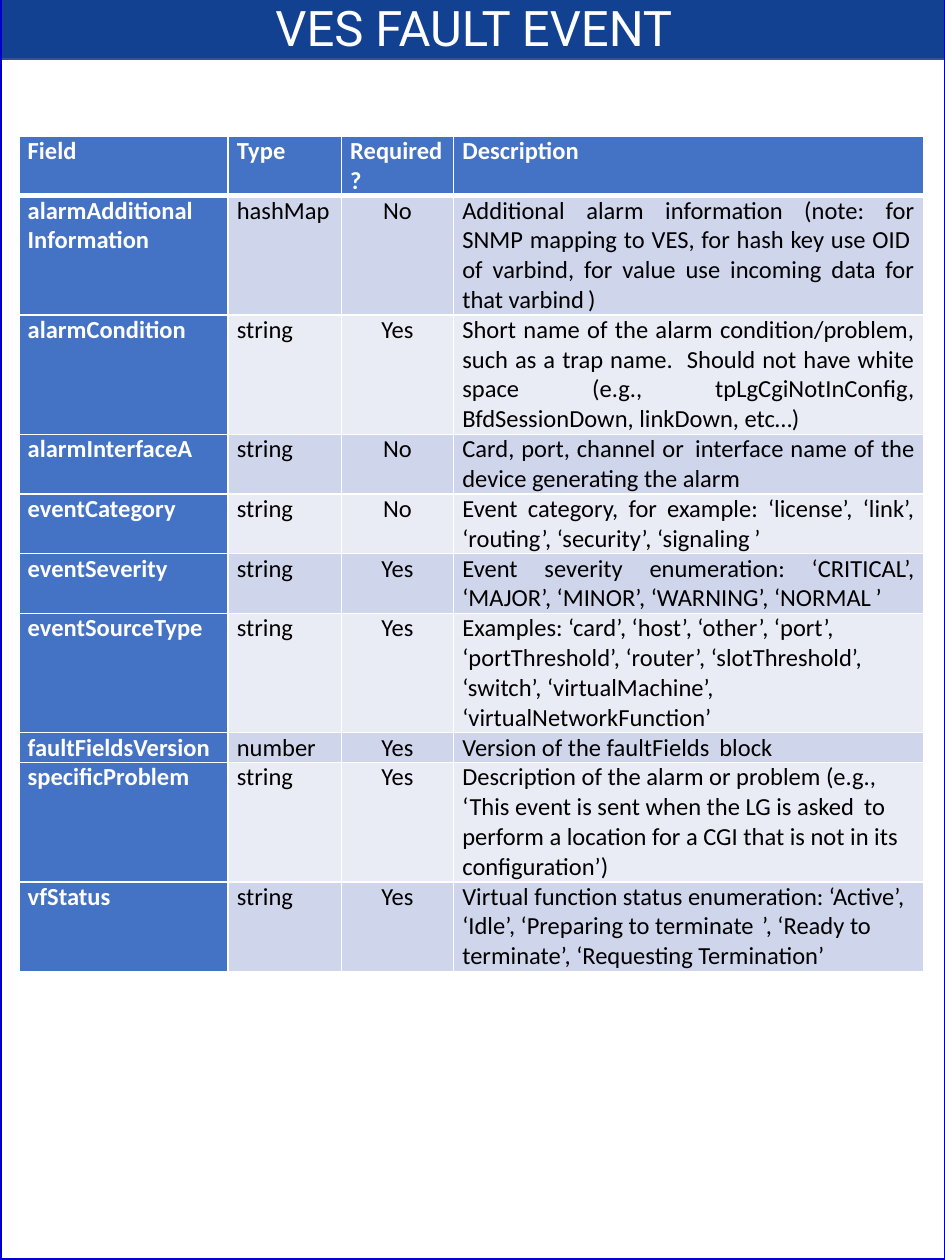
from lxml import etree
from pptx import Presentation
from pptx.dml.color import RGBColor
from pptx.enum.shapes import MSO_SHAPE
from pptx.enum.text import MSO_ANCHOR, MSO_AUTO_SIZE, PP_ALIGN
from pptx.oxml.ns import qn
from pptx.util import Inches, Pt

RECTANGLE = MSO_SHAPE.RECTANGLE
TOP = MSO_ANCHOR.TOP
FIT_SHAPE = MSO_AUTO_SIZE.SHAPE_TO_FIT_TEXT
LEFT, CENTER, JUSTIFY = PP_ALIGN.LEFT, PP_ALIGN.CENTER, PP_ALIGN.JUSTIFY

GAP = chr(160)
TITLE_ONLY = 5
COLUMN_WIDTHS = [1.66, 0.9, 0.89, 3.73]
ROW_LINES = [1, 3, 4, 2, 2, 2, 3, 1, 3, 3]
LINE_HEIGHT = 0.183
FIRST_LEFT_ALIGNED_ROW = 6

FIELDS = [
    (("Field",), "Type", "Required?", ("Description",)),
    (("alarmAdditional Information", GAP), "hashMap", "No",
     ("Additional alarm information (note: for SNMP mapping to VES, for hash key use OID", GAP,
      " of varbind, for value use incoming data for that varbind", GAP, ")")),
    (("alarmCondition",), "string", "Yes",
     ("Short name of the alarm condition/problem, such as a trap name.  Should not have "
      "white space (e.g., tpLgCgiNotInConfig, BfdSessionDown, linkDown, etc…)",)),
    (("alarmInterfaceA",), "string", "No",
     ("Card, port, channel or", GAP, " interface name of the device generating the alarm")),
    (("eventCategory", GAP), "string", "No",
     ("Event category, for example: ‘license’, ‘link’, ‘routing’, ‘security’, ‘signaling",
      GAP, "’ ")),
    (("eventSeverity", GAP), "string", "Yes",
     ("Event severity enumeration: ‘CRITICAL’, ‘MAJOR’, ‘MINOR’, ‘WARNING’, ‘NORMAL",
      GAP, "’")),
    (("eventSourceType", GAP), "string", "Yes",
     ("Examples: ‘card’, ‘host’, ‘other’, ‘port’, ‘portThreshold’, ‘router’, "
      "‘slotThreshold’, ‘switch’, ‘virtualMachine’, ‘virtualNetworkFunction’",)),
    (("faultFieldsVersion",), "number", "Yes",
     ("Version of the faultFields", GAP, " block")),
    (("specificProblem", GAP), "string", "Yes",
     ("Description of the alarm or problem (e.g., ‘This event is sent when the LG is asked",
      GAP, " to perform a location for a CGI that is not in its configuration’)")),
    (("vfStatus", GAP), "string", "Yes",
     ("Virtual function status enumeration: ‘Active’, ‘Idle’, ‘Preparing to terminate",
      GAP * 2, "’, ‘Ready to terminate’, ‘Requesting Termination’")),
]


def color(value):
    return RGBColor.from_string(value)


class FaultSlide:
    accent = "4472C4"
    bands = ("CFD5EA", "E9EBF5")
    white = "FFFFFF"
    black = "000000"

    def __init__(self, presentation):
        self.slide = presentation.slides.add_slide(presentation.slide_layouts[TITLE_ONLY])

    def run(self, paragraph, text, font_name, size, font_color, bold=False):
        run = paragraph.add_run()
        run.text = text
        run.font.name = font_name
        run.font.size = Pt(size)
        run.font.bold = bold
        run.font.color.rgb = color(font_color)

    def rectangle(self, left, top, width, height, line, line_width, fill=None):
        shape = self.slide.shapes.add_shape(
            RECTANGLE, Inches(left), Inches(top), Inches(width), Inches(height))
        shape.shadow.inherit = False
        if fill:
            shape.fill.solid()
            shape.fill.fore_color.rgb = color(fill)
        else:
            shape.fill.background()
        shape.line.color.rgb = color(line)
        shape.line.width = Pt(line_width)

    def title(self, text, left, top, width, height):
        title = self.slide.shapes.title
        title.left, title.top = Inches(left), Inches(top)
        title.width, title.height = Inches(width), Inches(height)
        frame = title.text_frame
        frame.word_wrap = False
        frame.auto_size = FIT_SHAPE
        frame.vertical_anchor = TOP
        paragraph = frame.paragraphs[0]
        paragraph.alignment = CENTER
        self.run(paragraph, text, "Roboto", 28, self.white)
        self.slide.shapes._spTree.append(title._element)

    def borders(self, cell, bottom_width):
        properties = cell._tc.get_or_add_tcPr()
        widths = {"a:lnL": 1, "a:lnR": 1, "a:lnT": 1, "a:lnB": bottom_width}
        for tag, width in widths.items():
            line = etree.SubElement(properties, qn(tag), w=str(Pt(width)))
            fill = etree.SubElement(line, qn("a:solidFill"))
            etree.SubElement(fill, qn("a:srgbClr"), val=self.white)

    def cell(self, cell, texts, alignment, fill, font_color, bold, bottom_width):
        cell.margin_left = cell.margin_right = Inches(0.07)
        cell.margin_top = cell.margin_bottom = 0
        self.borders(cell, bottom_width)
        cell.fill.solid()
        cell.fill.fore_color.rgb = color(fill)
        paragraph = cell.text_frame.paragraphs[0]
        paragraph.alignment = alignment
        for text in texts:
            size = 10 if text.startswith(GAP) else 14
            self.run(paragraph, text, "Calibri", size, font_color, bold)

    def table(self, rows, left, top):
        heights = [lines * LINE_HEIGHT for lines in ROW_LINES]
        table = self.slide.shapes.add_table(
            len(rows), len(COLUMN_WIDTHS), Inches(left), Inches(top),
            Inches(sum(COLUMN_WIDTHS)), Inches(sum(heights))).table
        for column, width in zip(table.columns, COLUMN_WIDTHS):
            column.width = Inches(width)
        for row_index, (name, kind, required, description) in enumerate(rows):
            table.rows[row_index].height = Inches(heights[row_index])
            header = row_index == 0
            required_alignment = JUSTIFY if header else CENTER
            description_alignment = LEFT if row_index >= FIRST_LEFT_ALIGNED_ROW else JUSTIFY
            contents = [(name, JUSTIFY), ((kind,), JUSTIFY),
                        ((required,), required_alignment), (description, description_alignment)]
            for column_index, (texts, alignment) in enumerate(contents):
                strong = header or column_index == 0
                fill = self.accent if strong else self.bands[(row_index - 1) % 2]
                self.cell(table.cell(row_index, column_index), texts, alignment, fill,
                          self.white if strong else self.black, strong, 3 if header else 1)


def main():
    presentation = Presentation()
    presentation.slide_width = Inches(7.5)
    presentation.slide_height = Inches(10)
    fault = FaultSlide(presentation)
    fault.table(FIELDS, 0.15, 1.08)
    fault.rectangle(0.01, -0.05, 7.5, 0.52, "325491", 1, "124192")
    fault.title("VES FAULT EVENT", 1.18, -0.07, 5.16, 0.57)
    fault.rectangle(0, -0.05, 7.51, 10.05, "0000CC", 2.25)
    presentation.save("out.pptx")


if __name__ == "__main__":
    main()
